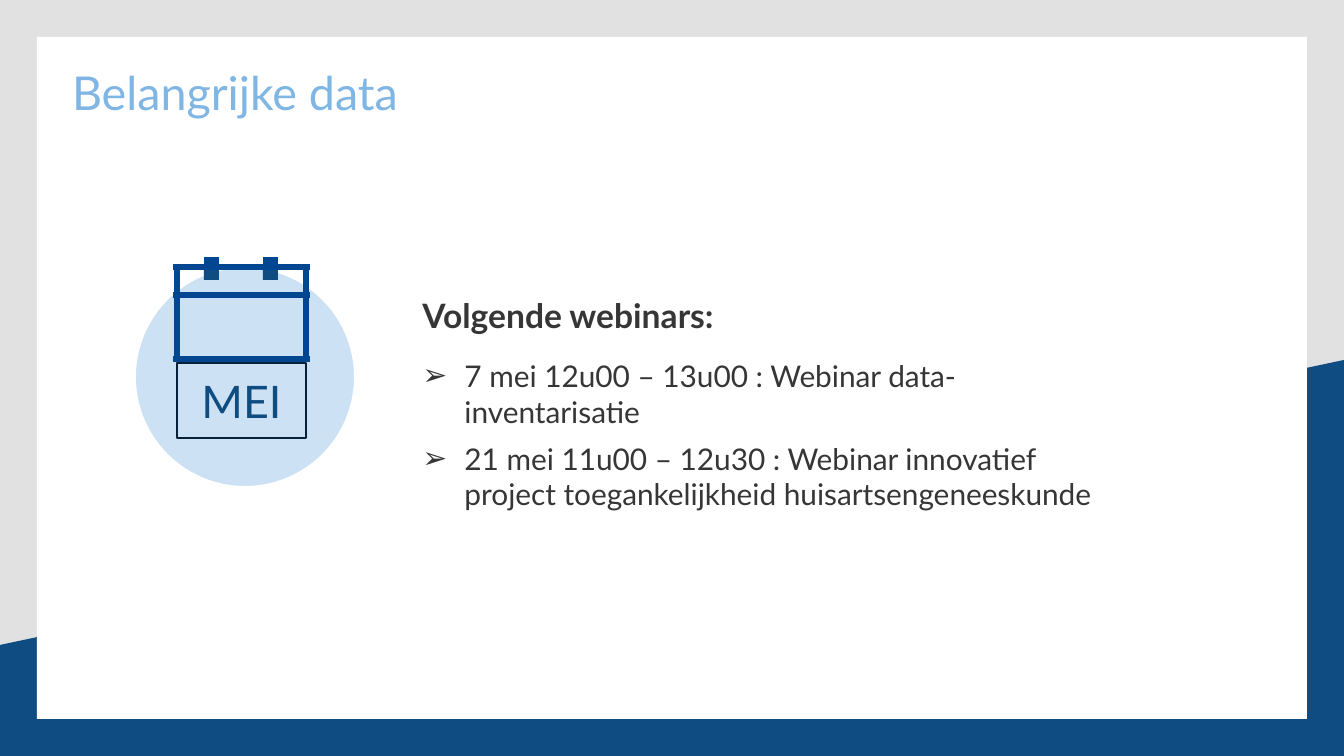
import lxml.etree
import pptx
import pptx.util
import pptx.dml.color
import pptx.enum.shapes
import pptx.enum.text
import pptx.oxml.ns

Pt = pptx.util.Pt
RGB = pptx.dml.color.RGBColor
Kind = pptx.enum.shapes.MSO_SHAPE
Align = pptx.enum.text.PP_ALIGN
Anchor = pptx.enum.text.MSO_ANCHOR
Fit = pptx.enum.text.MSO_AUTO_SIZE
qn = pptx.oxml.ns.qn

# Content
TITLE = "Belangrijke data"
HEAD = "Volgende webinars:"
ITEMS = [
    "7 mei 12u00 – 13u00 : Webinar data-inventarisatie",
    "21 mei 11u00 – 12u30 : Webinar innovatief project toegankelijkheid huisartsengeneeskunde",
]
MONTH = "MEI"

# Colours and text formats
GREY, WHITE = RGB(0xE1, 0xE1, 0xE1), RGB(0xFF, 0xFF, 0xFF)
NAVY, BLUE = RGB(0x0F, 0x4C, 0x81), RGB(0x00, 0x46, 0x90)
SKY, PALE = RGB(0x80, 0xB6, 0xE4), RGB(0xCC, 0xE2, 0xF4)
INK, DARK = RGB(0x37, 0x36, 0x36), RGB(0x07, 0x21, 0x39)
FONTS = {
    "title": {"size": Pt(25), "color": SKY, "bold": False},
    "head": {"size": Pt(18), "color": INK, "bold": True},
    "item": {"size": Pt(16), "color": INK, "bold": False},
    "month": {"size": Pt(24), "color": NAVY, "bold": False},
}

# Layout in px
WIDE, HIGH = 1344, 756
EDGE = 37
INDENT = 42
LEFT, RIGHT = 177, 306      # calendar sides
ROWS = [267, 295, 359]      # calendar rules
OVER = 4                    # rules reach past the sides
CLIPS = [204, 263]
CLIP = 15


def px(n):
    return round(n * 914400 / 134.4)


def style(para, name):
    para.font.name = "Lato"
    for key, val in FONTS[name].items():
        if key == "color":
            para.font.color.rgb = val
        else:
            setattr(para.font, key, val)


def place(shape, *box):
    for key, val in zip(("left", "top", "width", "height"), box):
        setattr(shape, key, px(val))


def paint(shape, fill=None, line=None):
    shape.shadow.inherit = False
    if fill is None:
        shape.fill.background()
    else:
        shape.fill.solid()
        shape.fill.fore_color.rgb = fill
    if line is None:
        shape.line.fill.background()
    else:
        shape.line.color.rgb = line
        shape.line.width = Pt(1)
    return shape


def draw(kind, box, fill=None, line=None):
    return paint(slide.shapes.add_shape(kind, *map(px, box)), fill, line)


def rule(x1, y1, x2, y2, width):
    line = slide.shapes.add_connector(
        pptx.enum.shapes.MSO_CONNECTOR.STRAIGHT, *map(px, (x1, y1, x2, y2)))
    line.line.color.rgb = BLUE
    line.line.width = Pt(width)
    lxml.etree.SubElement(line._element.spPr, qn("a:effectLst"))


def bullet(para, mark=None):
    props = para._p.get_or_add_pPr()
    gap = px(INDENT) if mark else 0
    props.set("marL", str(gap))
    props.set("indent", str(-gap))
    if mark:
        lxml.etree.SubElement(props, qn("a:buFont"), typeface="Arial")
        lxml.etree.SubElement(props, qn("a:buChar"), char=mark)
    else:
        lxml.etree.SubElement(props, qn("a:buNone"))


deck = pptx.Presentation()
deck.slide_width, deck.slide_height = px(WIDE), px(HIGH)
slide = deck.slides.add_slide(deck.slide_layouts[1])
title, body = slide.shapes.title, slide.placeholders[1]

# Backdrop: grey page, navy slope, white panel
slide.background.fill.solid()
slide.background.fill.fore_color.rgb = GREY
slope = slide.shapes.build_freeform(px(WIDE), px(360))
slope.add_line_segments(
    [(px(x), px(y)) for x, y in [(WIDE, HIGH), (0, HIGH), (0, 645)]], close=True)
paint(slope.convert_to_shape(), NAVY)
draw(Kind.RECTANGLE, (EDGE, EDGE, WIDE - 2 * EDGE, HIGH - 2 * EDGE), WHITE)

# Bring the placeholders in front of the panel
for holder in (title, body):
    slide.shapes._spTree.append(holder._element)

# Title
place(title, 72, 70, 879, 94)
frame = title.text_frame
frame.text = TITLE
for side in ("left", "top", "right", "bottom"):
    setattr(frame, "margin_" + side, 0)
frame.vertical_anchor = Anchor.TOP
frame.auto_size = Fit.NONE
para = frame.paragraphs[0]
para.alignment = Align.LEFT
para.line_spacing = 0.9
style(para, "title")

# Webinar list
place(body, 409, 288, 731, 196)
frame = body.text_frame
frame.auto_size = Fit.SHAPE_TO_FIT_TEXT
frame.text = "\n".join([HEAD] + ITEMS)
for i, para in enumerate(frame.paragraphs):
    bullet(para, "➢" if i else None)
    para.space_before = Pt(0)
    para.space_after = Pt(6 if i else 12)
    style(para, "item" if i else "head")

# Calendar on its disc
draw(Kind.OVAL, (135, 267, 220, 220), PALE, WHITE)
for y in ROWS:
    rule(LEFT - OVER, y, RIGHT + OVER, y, 3)
for x in (LEFT, RIGHT):
    for top, end in zip(ROWS, ROWS[1:]):
        rule(x, top + 3, x, end - 3, 3)
for x in CLIPS:
    draw(Kind.RECTANGLE, (x, 270, CLIP, 10), NAVY)
    rule(x, 261, x + CLIP, 261, 4)

# Month label
label = draw(Kind.RECTANGLE, (LEFT, 363, RIGHT - LEFT, 75), line=DARK)
frame = label.text_frame
frame.text = MONTH
frame.vertical_anchor = Anchor.MIDDLE
frame.paragraphs[0].alignment = Align.CENTER
style(frame.paragraphs[0], "month")

deck.save("out.pptx")
